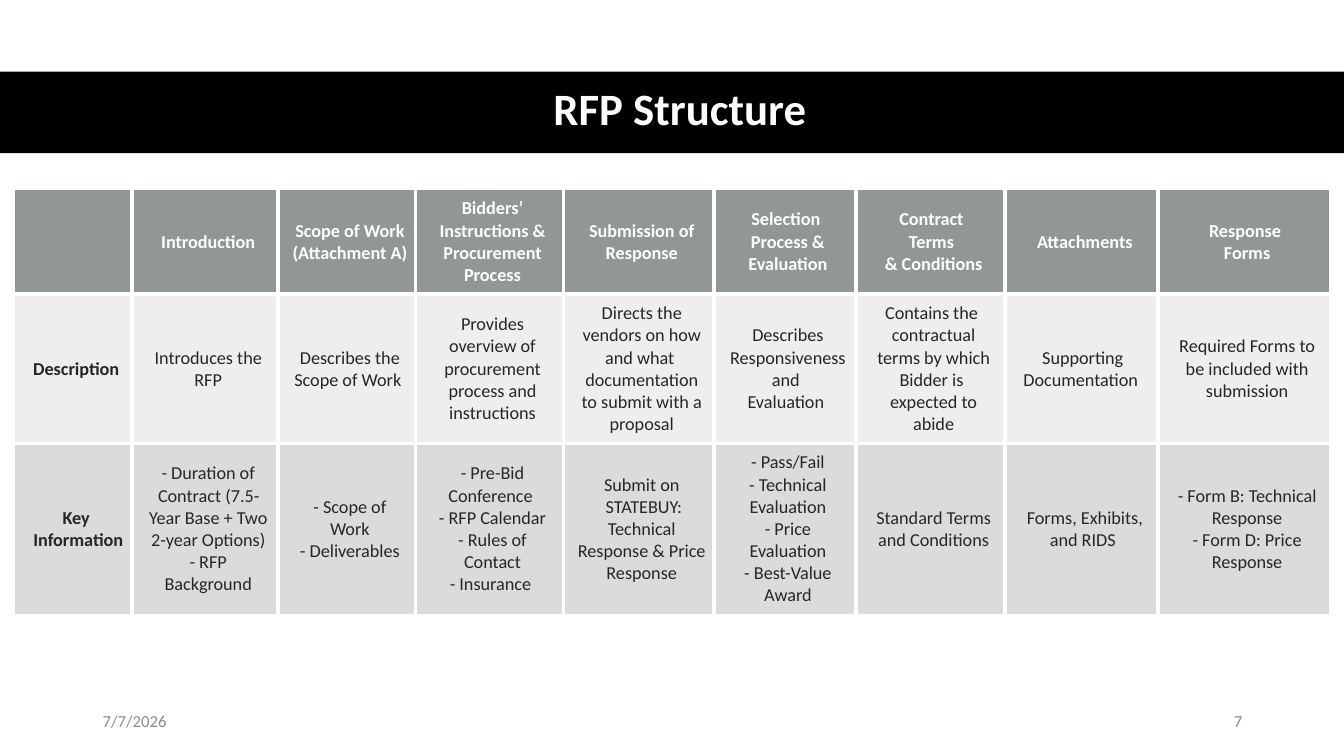
from lxml import etree
from pptx import Presentation
from pptx.dml.color import RGBColor
from pptx.enum.shapes import MSO_SHAPE
from pptx.enum.text import MSO_ANCHOR, PP_ALIGN
from pptx.oxml.ns import qn
from pptx.util import Inches, Pt

RECTANGLE = MSO_SHAPE.RECTANGLE
MIDDLE = MSO_ANCHOR.MIDDLE
LEFT, CENTER, RIGHT = PP_ALIGN.LEFT, PP_ALIGN.CENTER, PP_ALIGN.RIGHT

FONT = "Calibri"
COLORS = {
    "band": "000000",
    "white": "FFFFFF",
    "header": "636B68",
    "body": "878E8B",
    "ink": "262626",
    "footer": "8C8C8C",
}
SLIDE_WIDTH, SLIDE_HEIGHT = 13.33, 7.5
COLUMN_WIDTHS = [1.17, 1.45, 1.36, 1.47, 1.49, 1.41, 1.48, 1.52, 1.7]
ROW_HEIGHTS = [1.04, 1.48, 1.7]
ROW_FILLS = [("header", 70), ("body", 15), ("body", 30)]
BORDER_POINTS = 3

SECTIONS = [
    "",
    "Introduction",
    "Scope of Work (Attachment A)",
    "Bidders’ Instructions & Procurement Process",
    "Submission of Response",
    "Selection \nProcess & Evaluation",
    "Contract \nTerms \n& Conditions",
    "Attachments",
    "Response \nForms",
]
DESCRIPTIONS = [
    "Description",
    "Introduces the RFP",
    "Describes the\nScope of Work ",
    "Provides overview of procurement process and instructions",
    "Directs the vendors on how and what \ndocumentation to submit with a proposal",
    "Describes Responsiveness\nand \nEvaluation ",
    "Contains the \ncontractual terms by which Bidder is \nexpected to abide",
    "Supporting \nDocumentation  ",
    "Required Forms to be included with submission",
]
KEY_INFORMATION = [
    "Key\n Information",
    "- Duration of Contract (7.5-Year Base + Two 2-year Options)\n- RFP Background",
    "- Scope of Work\n- Deliverables",
    "- Pre-Bid Conference \n- RFP Calendar\n- Rules of Contact\n- Insurance ",
    "Submit on\n STATEBUY:\nTechnical Response & Price Response",
    "- Pass/Fail\n- Technical Evaluation\n- Price Evaluation\n- Best-Value Award",
    "Standard Terms and Conditions",
    "Forms, Exhibits, and RIDS ",
    "- Form B: Technical Response\n- Form D: Price Response",
]


def write(frame, text, size=13, color="ink", bold=False, align=CENTER, spacing=None):
    """Fill a text frame with one formatted paragraph per line of text."""
    frame.word_wrap = True
    for index, line in enumerate(text.split("\n")):
        paragraph = frame.add_paragraph() if index else frame.paragraphs[0]
        paragraph.alignment = align
        if spacing:
            paragraph.line_spacing = spacing
        run = paragraph.add_run()
        run.text = line
        run.font.name = FONT
        run.font.size = Pt(size)
        run.font.bold = bold
        run.font.color.rgb = RGBColor.from_string(COLORS[color])


def add_label(slide, box, text, **text_format):
    """Place a vertically centred text box."""
    label = slide.shapes.add_textbox(*map(Inches, box))
    label.text_frame.vertical_anchor = MIDDLE
    write(label.text_frame, text, **text_format)


def add_title_band(slide, box, title):
    """Draw the full-width band and centre its title in it."""
    left, top, width, height = box
    band = slide.shapes.add_shape(RECTANGLE, *map(Inches, box))
    band.shadow.inherit = False
    band.fill.solid()
    band.fill.fore_color.rgb = RGBColor.from_string(COLORS["band"])
    band.line.fill.background()
    title_box = (left + 0.046 * width, top - 0.01, 0.92 * width, height)
    add_label(slide, title_box, title, size=32, color="white", bold=True, spacing=0.9)


def add_borders(cell, sides):
    """Rule the given sides of a cell in white."""
    properties = cell._tc.get_or_add_tcPr()
    for side in sides:
        line = etree.SubElement(properties, qn(f"a:ln{side}"), w=str(Pt(BORDER_POINTS)))
        fill = etree.SubElement(line, qn("a:solidFill"))
        etree.SubElement(fill, qn("a:srgbClr"), val=COLORS["white"])


def fill_cell(cell, color, opacity):
    """Give a cell a translucent fill, with opacity in percent."""
    cell.fill.solid()
    cell.fill.fore_color.rgb = RGBColor.from_string(COLORS[color])
    tint = cell._tc.tcPr.find(qn("a:solidFill")).find(qn("a:srgbClr"))
    etree.SubElement(tint, qn("a:alpha"), val=str(opacity * 1000))


def add_structure_table(slide, left, top, rows):
    """Build the table of sections with white rules between its cells."""
    frame = slide.shapes.add_table(
        len(rows), len(COLUMN_WIDTHS), Inches(left), Inches(top),
        Inches(sum(COLUMN_WIDTHS)), Inches(sum(ROW_HEIGHTS)))
    table = frame.table
    table.first_row = table.horz_banding = False
    for column, width in zip(table.columns, COLUMN_WIDTHS):
        column.width = Inches(width)
    last_row, last_column = len(rows) - 1, len(COLUMN_WIDTHS) - 1
    for r, texts in enumerate(rows):
        table.rows[r].height = Inches(ROW_HEIGHTS[r])
        for c, text in enumerate(texts):
            cell = table.cell(r, c)
            inner_sides = {"L": c > 0, "R": c < last_column, "T": r > 0, "B": r < last_row}
            add_borders(cell, [side for side, inner in inner_sides.items() if inner])
            fill_cell(cell, *ROW_FILLS[r])
            cell.vertical_anchor = MIDDLE
            cell.margin_left = Inches(0.14)
            cell.margin_top = cell.margin_right = cell.margin_bottom = Inches(0.08)
            if text:
                write(cell.text_frame, text, bold=r == 0 or c == 0,
                      color="ink" if r else "white")


def add_footer(slide, box, date, number):
    """Set the date at the left and the slide number at the right of the box."""
    left, top, width, height = box
    label_width = 3
    right_start = left + width - label_width
    for start, text, align in ((left, date, LEFT), (right_start, number, RIGHT)):
        add_label(slide, (start, top, label_width, height), text,
                  size=12, color="footer", align=align)


def main():
    """Build and save the slide."""
    deck = Presentation()
    deck.slide_width, deck.slide_height = Inches(SLIDE_WIDTH), Inches(SLIDE_HEIGHT)
    slide = deck.slides.add_slide(deck.slide_layouts[6])
    add_title_band(slide, (0, 0.71, SLIDE_WIDTH, 0.81), "RFP Structure")
    add_footer(slide, (0.92, 6.95, 11.5, 0.4), "7/7/2026", "7")
    add_structure_table(slide, 0.14, 1.88, [SECTIONS, DESCRIPTIONS, KEY_INFORMATION])
    deck.save("out.pptx")


if __name__ == "__main__":
    main()
